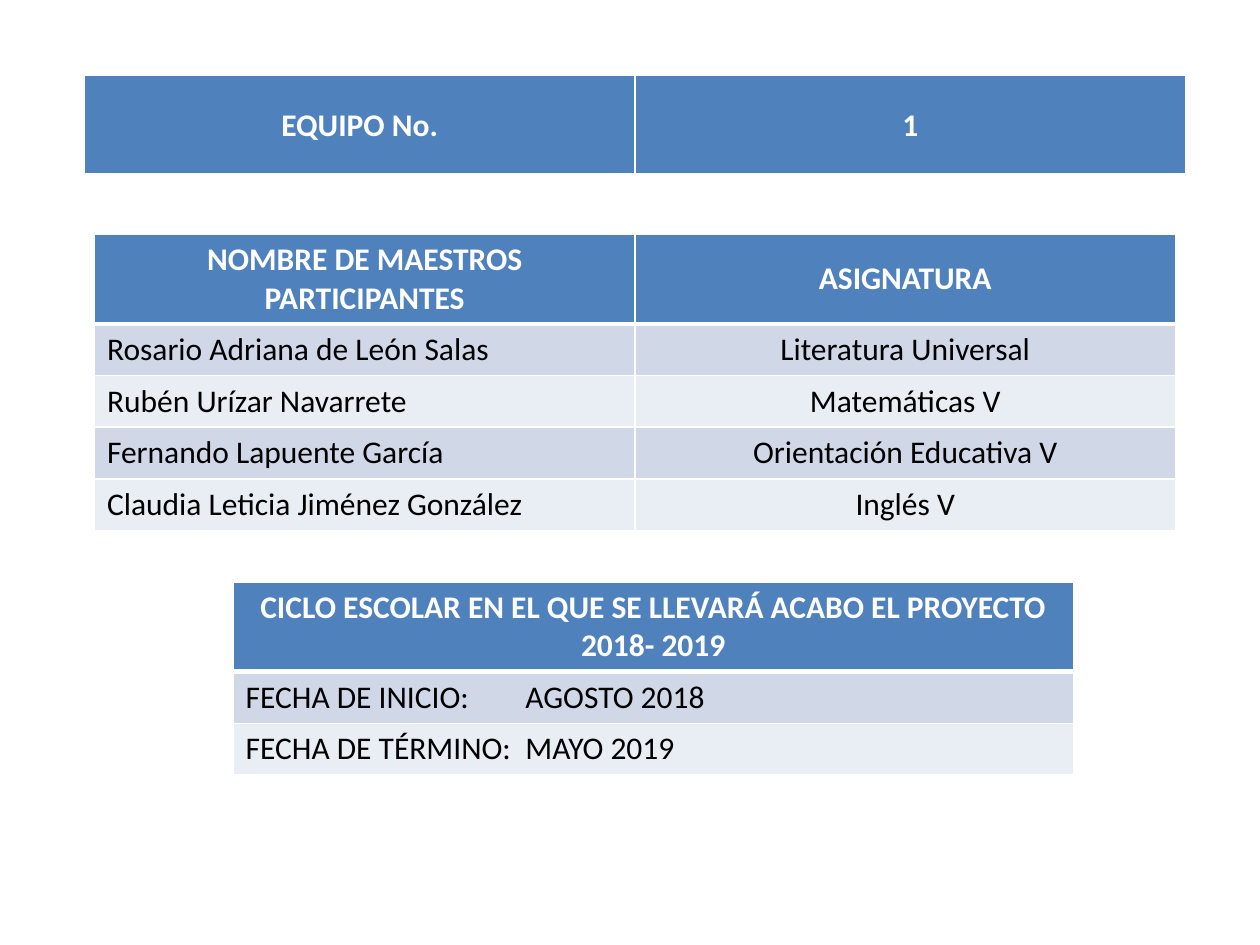
from pptx import Presentation
from pptx.dml.color import RGBColor
from pptx.enum.text import MSO_ANCHOR, PP_ALIGN
from pptx.oxml.ns import qn
from pptx.util import Inches, Pt
from lxml.etree import SubElement

COLORS = {"header": "4F81BD", "odd": "D0D8E8", "even": "E9EDF4",
          "white": "FFFFFF", "black": "000000"}
LEFT, CENTER = PP_ALIGN.LEFT, PP_ALIGN.CENTER
ROW = 0.41
TAB_STOP = Inches(2.22)

deck = Presentation()
deck.slide_width, deck.slide_height = Inches(10), Inches(7.5)
page = deck.slides.add_slide(deck.slide_layouts[6])

# Each table: left, top, width, header height, body alignments, rows of text
tables = [
    (0.67, 0.6, 8.74, 0.79, (CENTER, CENTER), [("EQUIPO No.", "1")]),
    (0.75, 1.86, 8.58, 0.7, (LEFT, CENTER), [
        ("NOMBRE DE MAESTROS PARTICIPANTES", "ASIGNATURA"),
        ("Rosario Adriana de León Salas", "Literatura Universal"),
        ("Rubén Urízar Navarrete", "Matemáticas V"),
        ("Fernando Lapuente García", "Orientación Educativa V"),
        ("Claudia Leticia Jiménez González", "Inglés V"),
    ]),
    (1.85, 4.62, 6.67, 0.7, (LEFT,), [
        ("CICLO ESCOLAR EN EL QUE SE LLEVARÁ ACABO EL PROYECTO\n2018- 2019",),
        ("FECHA DE INICIO:\tAGOSTO 2018",),
        ("FECHA DE TÉRMINO:\tMAYO 2019",),
    ]),
]


def add_borders(cell, bottom_width):
    properties = cell._tc.get_or_add_tcPr()
    for side in "LRTB":
        width = bottom_width if side == "B" else 1
        line = SubElement(properties, qn(f"a:ln{side}"), w=str(Pt(width)))
        fill = SubElement(line, qn("a:solidFill"))
        SubElement(fill, qn("a:srgbClr"), val=COLORS["white"])


def add_text(cell, text, align, color, bold):
    for number, line in enumerate(text.split("\n")):
        frame = cell.text_frame
        para = frame.add_paragraph() if number else frame.paragraphs[0]
        para.alignment = align
        if "\t" in line:
            stops = SubElement(para._p.get_or_add_pPr(), qn("a:tabLst"))
            SubElement(stops, qn("a:tab"), pos=str(TAB_STOP), algn="l")
        span = para.add_run()
        span.text = line
        span.font.name, span.font.size, span.font.bold = "Calibri", Pt(18), bold
        span.font.color.rgb = RGBColor.from_string(COLORS[color])


for left, top, width, header_height, aligns, rows in tables:
    columns = len(aligns)
    height = header_height + ROW * (len(rows) - 1)
    table = page.shapes.add_table(len(rows), columns, Inches(left), Inches(top),
                                  Inches(width), Inches(height)).table
    for column in table.columns:
        column.width = Inches(width / columns)

    for r, texts in enumerate(rows):
        header = r == 0
        table.rows[r].height = Inches(header_height if header else ROW)
        band = "header" if header else ("odd" if r % 2 else "even")
        for c, text in enumerate(texts):
            cell = table.cell(r, c)
            cell.vertical_anchor = MSO_ANCHOR.MIDDLE
            # A header's thick bottom line is shared with the row below
            add_borders(cell, 3 if header else 1)
            if r == 1:
                cell._tc.tcPr.find(qn("a:lnT")).set("w", str(Pt(3)))
            cell.fill.solid()
            cell.fill.fore_color.rgb = RGBColor.from_string(COLORS[band])
            add_text(cell, text, CENTER if header else aligns[c],
                     "white" if header else "black", header)

deck.save("out.pptx")
